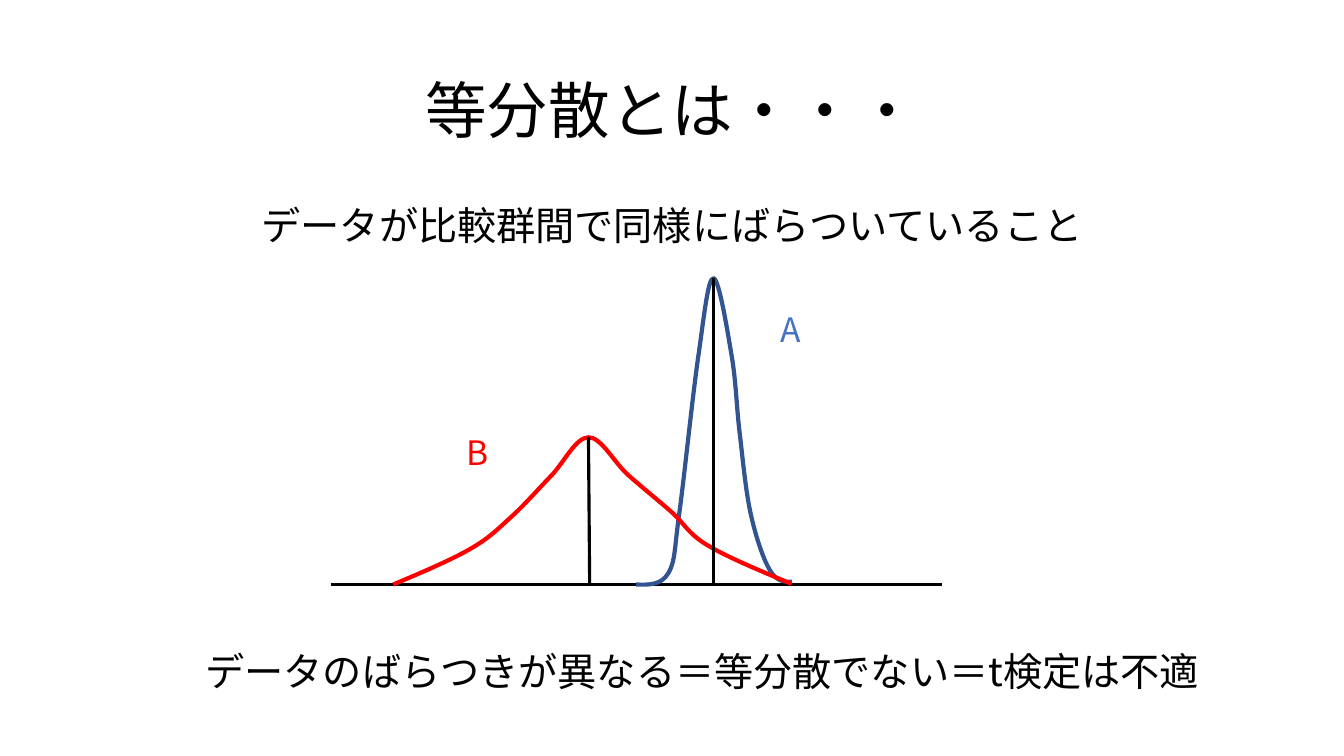
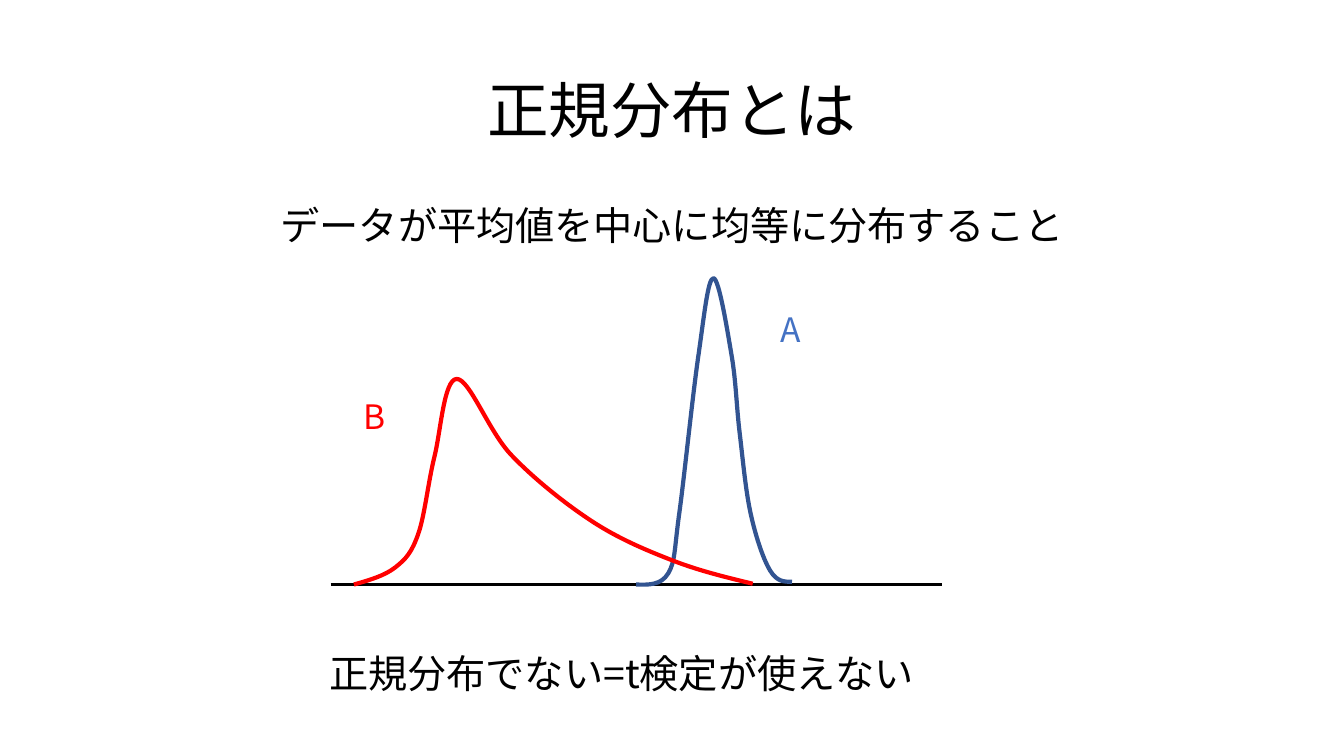
from lxml.etree import SubElement
from pptx import Presentation
from pptx.dml.color import RGBColor
from pptx.enum.shapes import MSO_CONNECTOR as Link
from pptx.enum.text import MSO_ANCHOR as Anchor, MSO_AUTO_SIZE as Fit, PP_ALIGN as Align
from pptx.oxml.ns import qn
from pptx.util import Cm, Pt

FONT = "Noto Sans CJK JP"
COLOR = {"ink": "000000", "a": "4472C4", "curve": "325491", "b": "FF0000"}

# Shared places, in cm: left, top, width, height
TITLE = (2.33, 1.01, 29.21, 3.68)
BODY = (2.33, 5.07, 29.21, 12.09)
TAG_A = (19.43, 7.65, 2.49, 1.27)
BASE = (8.33, 14.73, 23.75, 14.73)

# Curve A is the same on both slides
NARROW = [(16.03, 14.73), (16.84, 14.45), (17.12, 12.93), (17.6, 8.97),
          (17.98, 7.01), (18.44, 8.97), (18.64, 10.9), (18.92, 12.95),
          (19.41, 14.38), (19.96, 14.66)]

SLIDES = [
    {"title": "等分散とは・・・",
     "body": "データが比較群間で同様にばらついていること",
     "note": "データのばらつきが異なる＝等分散でない＝t検定は不適",
     "note_at": (4.93, 16.18, 26.14, 1.45),
     "tag_at": (11.51, 10.77, 1.35, 1.27),
     "curve": [(9.91, 14.73), (11.84, 13.84), (12.88, 13.03), (13.89, 11.99),
               (14.83, 11.02), (15.82, 11.96), (16.92, 12.9), (17.83, 13.74),
               (19.94, 14.71)],
     "means": [(14.83, 11.02, 14.86, 14.73), (17.98, 7.01, 17.98, 14.73)]},
    {"title": "正規分布とは",
     "body": "データが平均値を中心に均等に分布すること",
     "note": "正規分布でない=t検定が使えない",
     "note_at": (8.05, 16.23, 15.95, 1.45),
     "tag_at": (8.92, 9.86, 1.35, 1.27),
     "curve": [(8.92, 14.73), (9.96, 14.3), (10.54, 13.46), (10.95, 11.51),
               (11.51, 9.55), (12.88, 11.46), (14.91, 13.13), (16.94, 14.12),
               (18.97, 14.71)],
     "means": []},
]


def color(name):
    return RGBColor.from_string(COLOR[name])


def write(shape, text, size, ink="ink"):
    shape.text_frame.text = text
    para = shape.text_frame.paragraphs[0]
    for run in para.runs:
        font = run.font
        font.size, font.name = Pt(size), FONT
        font.color.rgb = color(ink)
        SubElement(font._element, qn("a:ea"), typeface=FONT)
    return para


def fill_holder(shape, box, text, size):
    shape.left, shape.top, shape.width, shape.height = map(Cm, box)
    para = write(shape, text, size)
    para.alignment, para.line_spacing = Align.CENTER, 0.9
    shape.text_frame.auto_size = Fit.NONE
    return para


def add_label(slide, box, text, size, ink="ink"):
    shape = slide.shapes.add_textbox(*map(Cm, box))
    write(shape, text, size, ink)
    shape.text_frame.word_wrap = True
    shape.text_frame.auto_size = Fit.SHAPE_TO_FIT_TEXT


def add_line(slide, ends):
    line = slide.shapes.add_connector(Link.STRAIGHT, *map(Cm, ends))
    line.line.color.rgb, line.line.width = color("ink"), Pt(2.25)
    SubElement(line._element.spPr, qn("a:effectLst"))


def mix(p, q, t):
    return tuple(a + (b - a) * t for a, b in zip(p, q))


def handles(pts):
    """Two control points per segment, each tangent parallel to its neighbours' chord."""
    slope = [tuple((b - a) / 6 for a, b in zip(p, q)) for p, q in zip(pts, pts[2:])]
    out = [tuple(map(sum, zip(p, s))) for p, s in zip(pts[1:], slope)]
    back = [tuple(a - b for a, b in zip(p, s)) for p, s in zip(pts[1:], slope)]
    first, last = mix(pts[0], back[0], 0.5), mix(out[-1], pts[-1], 0.5)
    return list(zip([first] + out, back + [last]))


def add_curve(slide, pts, ink):
    pen = slide.shapes.build_freeform(*map(Cm, pts[0]))
    pen.add_line_segments([tuple(map(Cm, p)) for p in pts[1:]], close=False)
    shape = pen.convert_to_shape()
    shape.shadow.inherit = False
    shape.fill.background()
    shape.line.color.rgb, shape.line.width = color(ink), Pt(3)
    # Bend each straight segment
    steps = list(shape._element.iter(qn("a:lnTo")))
    for step, pair, end in zip(steps, handles(pts), pts[1:]):
        bend = SubElement(step.getparent(), qn("a:cubicBezTo"))
        for x, y in (*pair, end):
            SubElement(bend, qn("a:pt"), x=str(Cm(x) - shape.left),
                       y=str(Cm(y) - shape.top))
        step.getparent().replace(step, bend)


def build(deck, data):
    slide = deck.slides.add_slide(deck.slide_layouts[1])

    # Title and lead sentence
    title, body = slide.shapes.title, slide.placeholders[1]
    fill_holder(title, TITLE, data["title"], 44)
    title.text_frame.vertical_anchor = Anchor.MIDDLE
    para = fill_holder(body, BODY, data["body"], 28)
    para.space_before = Pt(10)
    props = para._p.get_or_add_pPr()
    props.set("marL", "0")
    props.set("indent", "0")
    SubElement(props, qn("a:buNone"))

    # Distributions
    add_line(slide, BASE)
    add_curve(slide, NARROW, "curve")
    add_curve(slide, data["curve"], "b")
    for ends in data["means"]:
        add_line(slide, ends)

    # Labels and conclusion
    add_label(slide, TAG_A, "A", 24, "a")
    add_label(slide, data["tag_at"], "B", 24, "b")
    add_label(slide, data["note_at"], data["note"], 28)


def main():
    deck = Presentation()
    deck.slide_width, deck.slide_height = Cm(33.87), Cm(19.05)
    for data in SLIDES:
        build(deck, data)
    deck.save("out.pptx")


if __name__ == "__main__":
    main()
